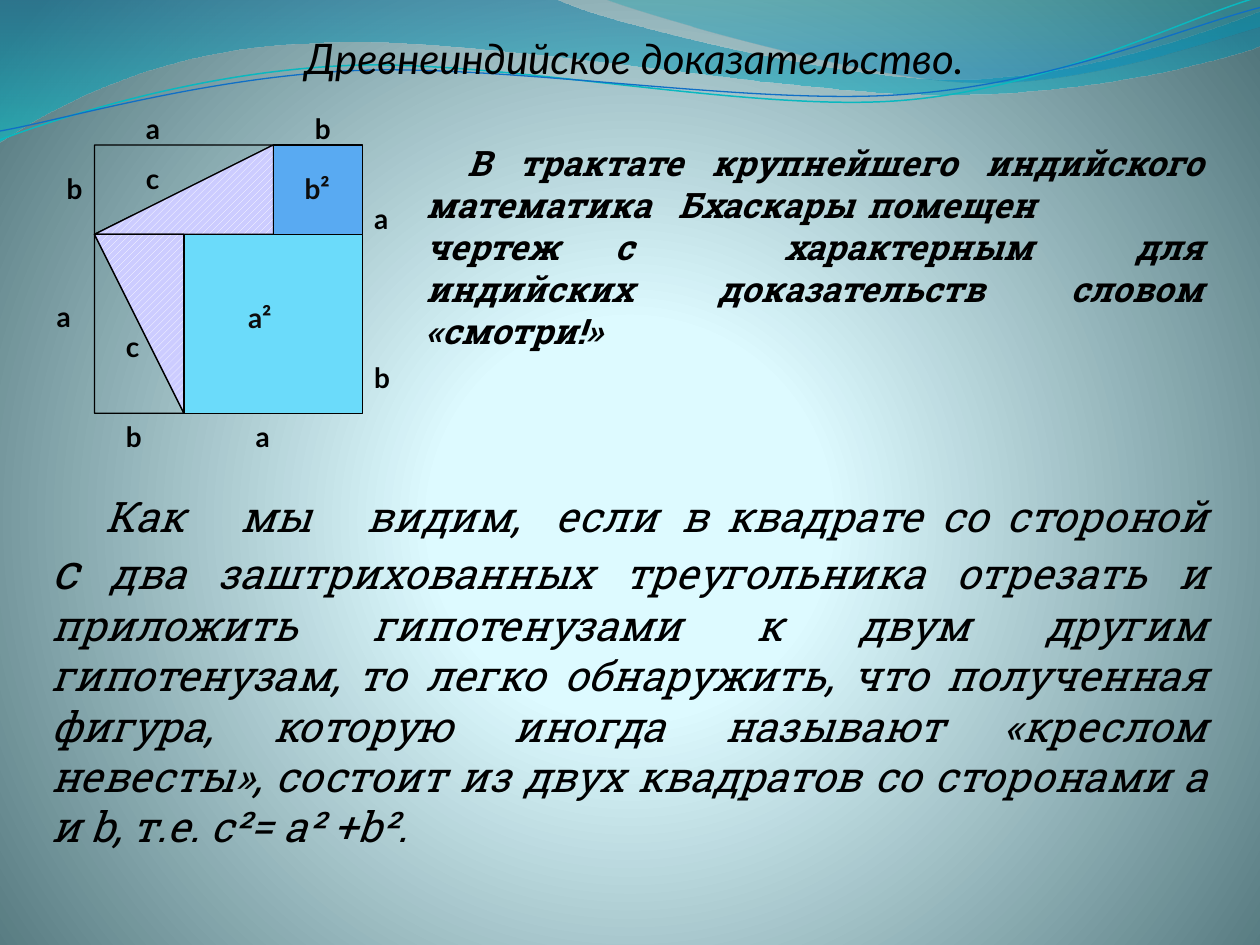
"""Build the slide on the ancient Indian proof of the Pythagorean theorem."""
from lxml import etree
from pptx import Presentation
from pptx import util as u
from pptx.dml.color import RGBColor
from pptx.enum import dml, shapes, text
from pptx.oxml import ns

BLACK = RGBColor(0x00, 0x00, 0x00)
WHITE = RGBColor(0xFF, 0xFF, 0xFF)
DARK = RGBColor(0x0D, 0x0D, 0x0D)
LILAC = RGBColor(0xCC, 0xCC, 0xFF)
BLUE = RGBColor(0x59, 0xAA, 0xF2)
CYAN = RGBColor(0x6B, 0xDB, 0xFA)
TEAL_LINE = RGBColor(0x0A, 0xB8, 0xBF)
BLUE_LINE = RGBColor(0x0F, 0x6F, 0xC6)
BACKGROUND = [(0, RGBColor(0xDE, 0xFB, 0xFF), 100), (25, RGBColor(0xDD, 0xFA, 0xFF), 100),
              (100, RGBColor(0x52, 0x76, 0x7C), 100)]
WIDE_BAND = [(0, RGBColor(0x00, 0x74, 0xA1), 45), (100, RGBColor(0x00, 0xC6, 0xCF), 55)]
NARROW_BAND = [(0, RGBColor(0x00, 0xA1, 0xA9), 30), (80, RGBColor(0x00, 0x8B, 0xBF), 45)]

LEFT, TOP, A, B = 0.75, 1.15, 1.42, 0.71
LABEL = {"size": u.Pt(16), "name": "Lato", "bold": True}
TITLE = {"size": u.Pt(24), "name": "Lato", "italic": True, "bold": False}
INTRO = {"size": u.Pt(20), "name": "Roboto Slab", "italic": True, "bold": True}
BODY = {"size": u.Pt(24), "name": "Roboto Slab", "italic": True}

WAVES = [
    ([(0, 0), (4.4, -0.01), (4.76, 0.17, 6.64, 0.63, 7.58, 0.63),
      (8.53, 0.63, 9.58, 0.26, 10, 0.09), (10.01, 0.36),
      (9.83, 0.44, 8.7, 0.76, 7.46, 0.75), (6.22, 0.75, 3.82, 0.28, 2.57, 0.34),
      (1.29, 0.36, 0.46, 0.83, -0.01, 1.13)], WIDE_BAND),
    ([(4.79, -0.01), (5.09, 0.11, 6.82, 0.62, 7.69, 0.65),
      (8.56, 0.69, 9.61, 0.32, 10, 0.21), (10, 0)], NARROW_BAND),
]
STRANDS = [
    ([(0, 1.11), (0.48, 0.93, 1.58, 0.57, 2.77, 0.52), (3.95, 0.47, 5.93, 0.89, 7.13, 0.8),
      (8.33, 0.71, 9.38, 0.15, 9.98, -0.02)], TEAL_LINE, 0.85),
    ([(0, 1.04), (0.47, 0.96, 1.64, 0.61, 2.83, 0.56), (4.03, 0.51, 5.97, 0.84, 7.17, 0.75),
      (8.36, 0.67, 9.41, 0.21, 10, 0.06)], BLUE_LINE, 0.75),
]
SIDE_LABELS = [
    ("a", 1.93, 3.28), ("b", 0.9, 3.28), ("с", 1.06, 1.23), ("с", 0.9, 2.57),
    ("а", 1.06, 0.84), ("b", 2.4, 0.84), ("а", 0.35, 2.33), ("а", 2.87, 1.55),
    ("b", 0.43, 1.31), ("b", 2.87, 2.81),
]
INTRO_LINES = ["В трактате крупнейшего индийского математика\tБхаскары\tпомещен",
               "чертеж\tс характерным\t\tдля",
               "индийских доказательств словом «смотри!»"]
BODY_START = "Как\tмы\tвидим,\tесли\tв квадрате со стороной "
BODY_REST = (" два заштрихованных треугольника отрезать и приложить гипотенузами к двум "
             "другим гипотенузам, то легко обнаружить, что полученная фигура, которую "
             "иногда называют «креслом невесты», состоит из двух квадратов со сторонами "
             "а и b, т.е. с²= а² +b².")


def add_element(parent, tag, **attributes):
    """Append a DrawingML element with the given attributes."""
    values = {key: str(value) for key, value in attributes.items()}
    return etree.SubElement(parent, ns.qn(tag), values)


def set_gradient(fill_element, stops, radial=False):
    """Fill a gradient element with stops and a direction."""
    for child in list(fill_element):
        fill_element.remove(child)
    stop_list = add_element(fill_element, "a:gsLst")
    for position, color, opacity in stops:
        stop = add_element(stop_list, "a:gs", pos=position * 1000)
        color_element = add_element(stop, "a:srgbClr", val=color)
        if opacity < 100:
            add_element(color_element, "a:alpha", val=opacity * 1000)
    if radial:
        direction = add_element(fill_element, "a:path", path="circle")
        add_element(direction, "a:fillToRect", l=10000, t=110000, r=10000, b=100000)
    else:
        add_element(fill_element, "a:lin", ang=5400000, scaled=1)


def add_curve(slide, segments, close):
    """Draw a freeform whose six-number segments become cubic curves."""
    points = [(u.Inches(x), u.Inches(y)) for segment in segments
              for x, y in zip(segment[::2], segment[1::2])]
    builder = slide.shapes.build_freeform(*points[0])
    builder.add_line_segments(points[1:], close=close)
    shape = builder.convert_to_shape()
    shape.shadow.inherit = False
    lines = iter(shape.element.findall(".//" + ns.qn("a:lnTo")))
    for segment in segments[1:]:
        first = next(lines)
        if len(segment) == 6:
            curve = etree.Element(ns.qn("a:cubicBezTo"))
            first.addprevious(curve)
            for line in (first, next(lines), next(lines)):
                curve.append(line[0])
                line.getparent().remove(line)
    return shape


def add_waves(slide):
    """Draw the coloured bands and thin strands at the top."""
    for segments, stops in WAVES:
        band = add_curve(slide, segments, True)
        band.line.fill.background()
        band.fill.gradient()
        set_gradient(band.element.spPr.find(ns.qn("a:gradFill")), stops)
    for segments, color, width in STRANDS:
        strand = add_curve(slide, segments, False)
        strand.fill.background()
        strand.line.color.rgb = color
        strand.line.width = u.Pt(width)


def set_outline(shape):
    """Give a shape or connector the thin black line."""
    shape.line.color.rgb = BLACK
    shape.line.width = u.Pt(0.75)


def add_figure(slide, kind, left, top, width, height, rotation=0):
    """Add an unfilled black-outlined shape."""
    shape = slide.shapes.add_shape(kind, *map(u.Inches, (left, top, width, height)))
    shape.rotation = rotation
    shape.shadow.inherit = False
    shape.fill.background()
    set_outline(shape)
    return shape


def add_run(paragraph, words, style, color=BLACK):
    """Add a formatted run to a paragraph."""
    run = paragraph.add_run()
    run.text = words
    for name, value in style.items():
        setattr(run.font, name, value)
    run.font.color.rgb = color


def add_text_box(slide, left, top, width, height):
    """Add a wrapping text box and return its justified paragraph."""
    box = slide.shapes.add_textbox(*map(u.Inches, (left, top, width, height)))
    box.text_frame.word_wrap = True
    paragraph = box.text_frame.paragraphs[0]
    paragraph.alignment = text.PP_ALIGN.JUSTIFY
    return paragraph


def set_tabs(paragraph, indent, stops):
    """Set the first-line indent and tab stops."""
    properties = paragraph._p.get_or_add_pPr()
    properties.set("marL", "0")
    properties.set("indent", str(u.Inches(indent)))
    tab_list = add_element(properties, "a:tabLst")
    for stop in stops:
        add_element(tab_list, "a:tab", pos=u.Inches(stop), algn="l")


def add_title(slide):
    """Format the title and bring it in front of the waves."""
    title = slide.shapes.title
    for name, value in zip(("left", "top", "width", "height"), (0.43, 0.21, 9.21, 0.5)):
        setattr(title, name, u.Inches(value))
    title.text_frame.vertical_anchor = text.MSO_ANCHOR.MIDDLE
    title.text_frame.auto_size = text.MSO_AUTO_SIZE.NONE
    paragraph = title.text_frame.paragraphs[0]
    paragraph.alignment = text.PP_ALIGN.CENTER
    add_run(paragraph, "Древнеиндийское доказательство.", TITLE)
    slide.shapes.element.append(title.element)


def add_diagram(slide):
    """Draw the triangles, the two squares and their labels."""
    triangle = shapes.MSO_SHAPE.RIGHT_TRIANGLE
    offset = (A - B) / 2
    for left, top, rotation in ((LEFT + offset, TOP - offset, 90), (LEFT, TOP + B, 0)):
        add_figure(slide, triangle, left, top, B, A, rotation)
        hatched = add_figure(slide, triangle, left, top, B, A, rotation + 180)
        hatched.fill.patterned()
        hatched.fill.pattern = dml.MSO_PATTERN.WIDE_UPWARD_DIAGONAL
        hatched.fill.fore_color.rgb = WHITE
        hatched.fill.back_color.rgb = LILAC
    divider = slide.shapes.add_connector(
        shapes.MSO_CONNECTOR.STRAIGHT, *map(u.Inches, (LEFT + A, TOP + B, LEFT, TOP + B)))
    set_outline(divider)
    add_element(divider.element.spPr, "a:effectLst")
    for left, top, side, color in ((LEFT + A, TOP, B, BLUE), (LEFT + B, TOP + B, A, CYAN)):
        square = add_figure(slide, shapes.MSO_SHAPE.RECTANGLE, left, top, side, side)
        square.fill.solid()
        square.fill.fore_color.rgb = color
    for words, left, top in SIDE_LABELS:
        add_run(add_text_box(slide, left, top, 0.39, 0.37), words, LABEL)
    for words, left, top, width in (("b²", 2.32, 1.31, 0.47), ("a²", 1.87, 2.34, 0.55)):
        add_run(add_text_box(slide, left, top, width, 0.37), words, LABEL, DARK)


def add_texts(slide):
    """Add the introduction and the explanation."""
    intro = add_text_box(slide, 3.28, 1.07, 6.37, 1.78)
    set_tabs(intro, 0.33, (2, 4.82, 5.29))
    for number, words in enumerate(INTRO_LINES):
        if number:
            intro.add_line_break()
        add_run(intro, words, INTRO)
    body = add_text_box(slide, 0.31, 3.84, 9.37, 3.4)
    set_tabs(body, 0.43, (1.32, 2.17, 3.62, 4.58))
    add_run(body, BODY_START, BODY)
    add_run(body, "с", {**BODY, "size": u.Pt(28)})
    add_run(body, BODY_REST, BODY)


def main():
    """Build and save the presentation."""
    presentation = Presentation()
    presentation.slide_width, presentation.slide_height = u.Inches(10), u.Inches(7.5)
    slide = presentation.slides.add_slide(presentation.slide_layouts[5])
    slide.background.fill.gradient()
    set_gradient(slide.element.find(".//" + ns.qn("a:gradFill")), BACKGROUND, radial=True)
    for add_part in (add_waves, add_title, add_diagram, add_texts):
        add_part(slide)
    presentation.save("out.pptx")


if __name__ == "__main__":
    main()
